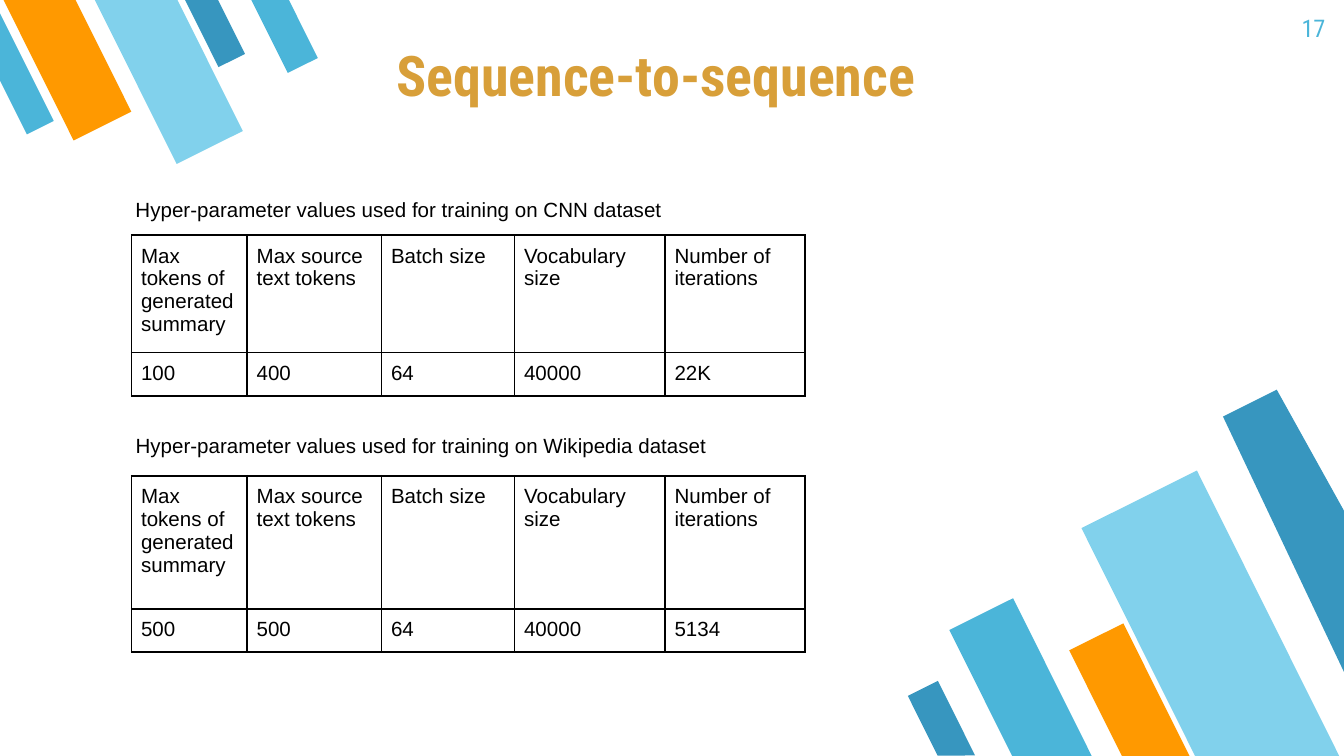
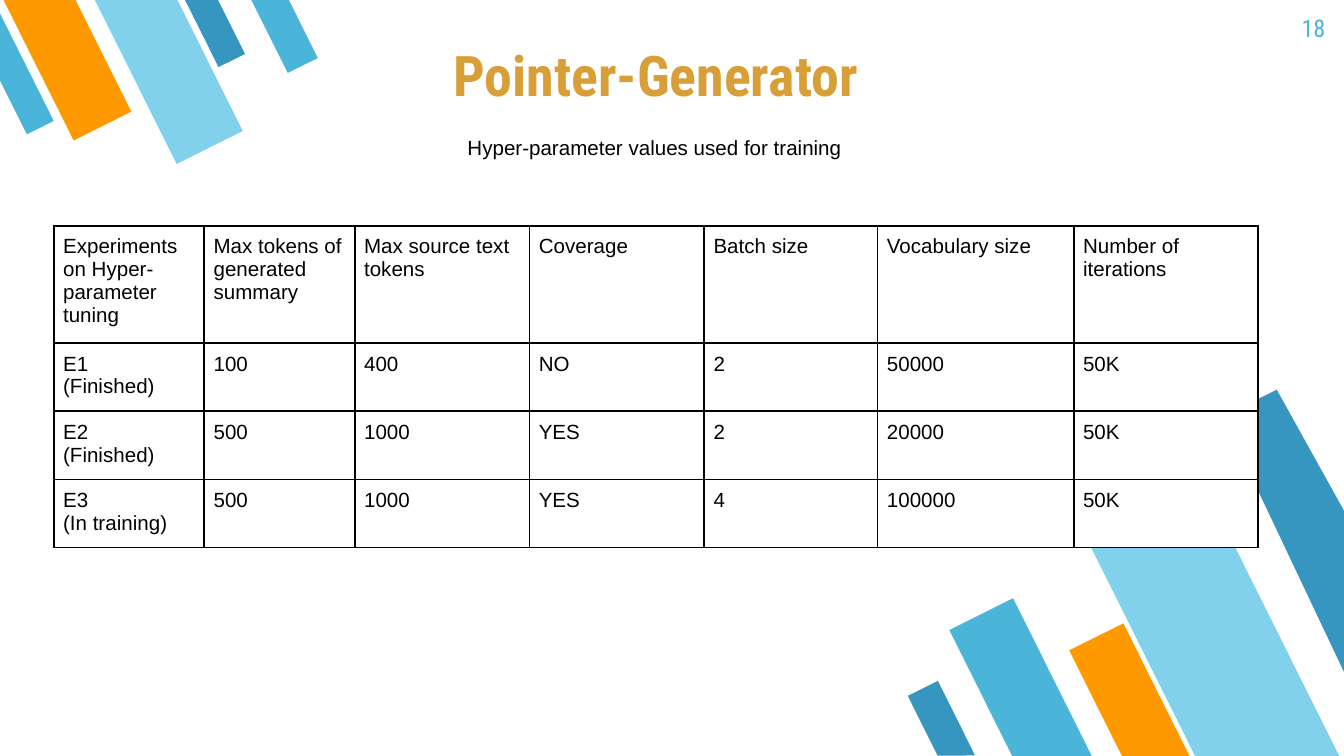
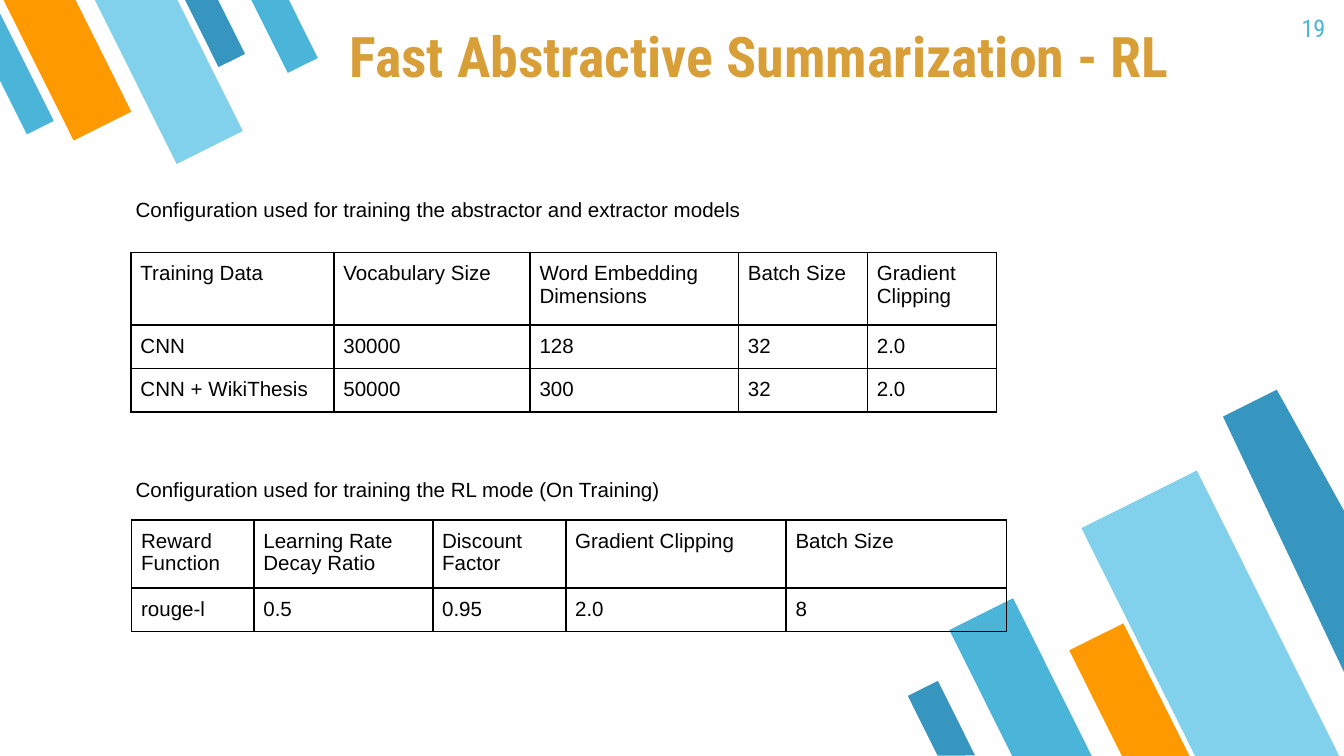
from lxml import etree
from pptx import Presentation
from pptx.dml.color import RGBColor
from pptx.enum.shapes import MSO_SHAPE
from pptx.enum.text import MSO_ANCHOR, PP_ALIGN
from pptx.oxml import parse_xml
from pptx.oxml.ns import nsdecls
from pptx.util import Inches, Pt

BAND = MSO_SHAPE.FLOWCHART_MANUAL_INPUT
TOP, BOTTOM = MSO_ANCHOR.TOP, MSO_ANCHOR.BOTTOM
LEFT, CENTER, RIGHT = PP_ALIGN.LEFT, PP_ALIGN.CENTER, PP_ALIGN.RIGHT

COLORS = {
    "sky": "4BB5D9",
    "pale": "81D1EC",
    "orange": "FF9900",
    "deep": "3796BF",
    "gold": "D89F39",
    "black": "000000",
    "white": "FFFFFF",
}
RGB = {name: RGBColor.from_string(value) for name, value in COLORS.items()}
HEADING_FONT, BODY_FONT = "Roboto Condensed", "Arial"

deck = Presentation()
deck.slide_width = Inches(10)
deck.slide_height = Inches(5.625)
COL = deck.slide_width / 100
ROW = deck.slide_height / 56.25
PADDING = round(COL)
CELL_PADDING = round(0.7 * COL)

RISING, FALLING = 153.5, 333.5
BANDS = [
    (73.3, 45, 5.3, 13.2, RISING, "sky"),
    (85.3, 35.9, 9.6, 23.9, RISING, "pale"),
    (81.8, 46.8, 4.5, 11.1, RISING, "orange"),
    (68.8, 50.9, 2.5, 6.2, RISING, "deep"),
    (14.9, -0.8, 2.2, 5.6, FALLING, "deep"),
    (2.6, -1.8, 4.8, 11.8, FALLING, "orange"),
    (9.8, -2, 5.5, 13.7, FALLING, "pale"),
    (19.9, -1, 2.5, 6.2, FALLING, "sky"),
]
EDGE_BANDS = [
    ([(95.4, 29), (90.7, 31.3), (100, 50.1), (100, 38.3)], "deep"),
    ([(2, 10), (4.2, 9), (0, 0.6), (0, 5.9)], "sky"),
]

SEQUENCE_HEADER = ["Max tokens of generated summary", "Max source text tokens",
                   "Batch size", "Vocabulary size"]
SEQUENCE_COLS = [8.6, 10, 9.9, 11.2, 10.4]

PAGES = [
    {
        "number": "17",
        "title": ("Sequence-to-sequence", 4, 1.6),
        "captions": [
            ("Hyper-parameter values used for training on CNN dataset", 9.1, 13.7, 42.7),
            ("Hyper-parameter values used for training on Wikipedia dataset", 9.1, 31.3, 46.1),
        ],
        "tables": [
            (9.8, 17.5, SEQUENCE_COLS, [8.6, 3.1], None, [
                SEQUENCE_HEADER + ["Number of\niterations"],
                ["100", "400", "64", "40000", "22K"],
            ]),
            (9.8, 35.4, SEQUENCE_COLS, [9.9, 3.1], None, [
                SEQUENCE_HEADER + ["Number of iterations"],
                ["500", "500", "64", "40000", "5134"],
            ]),
        ],
    },
    {
        "number": "18",
        "title": ("Pointer-Generator", 4, 1.6),
        "captions": [("Hyper-parameter values used for training", 33.8, 9.1, 30)],
        "tables": [
            (4, 16.8, [11.2, 11.2, 13, 13, 12.9, 14.6, 13.7], [8.6, 4.8, 4.8, 4.8], "white", [
                ["Experiments on Hyper-parameter tuning", "Max tokens of generated summary",
                 "Max source text tokens", "Coverage", "Batch size", "Vocabulary size",
                 "Number of\niterations"],
                ["E1\n(Finished)", "100", "400", "NO", "2", "50000", "50K"],
                ["E2\n(Finished)", "500", "1000", "YES", "2", "20000", "50K"],
                ["E3\n(In training)", "500", "1000", "YES", "4", "100000", "50K"],
            ]),
        ],
    },
    {
        "number": "19",
        "title": ("Fast Abstractive Summarization - RL", 11.7, 0.2),
        "captions": [
            ("Configuration used for training the abstractor and extractor models", 9.1, 13.7, 52.9),
            ("Configuration used for training the RL mode (On Training)", 9.1, 34.6, 46.1),
        ],
        "tables": [
            (9.75, 18.8, [15.1, 14.6, 15.5, 9.6, 9.6], [5.4, 3.1, 3.1], None, [
                ["Training Data", "Vocabulary Size", "Word Embedding Dimensions",
                 "Batch Size", "Gradient Clipping"],
                ["CNN", "30000", "128", "32", "2.0"],
                ["CNN + WikiThesis", "50000", "300", "32", "2.0"],
            ]),
            (9.8, 38.7, [9.1, 13.3, 9.9, 16.4, 16.4], [4.8, 3.1], None, [
                ["Reward Function", "Learning Rate Decay Ratio", "Discount Factor",
                 "Gradient Clipping", "Batch Size"],
                ["rouge-l", "0.5", "0.95", "2.0", "8"],
            ]),
        ],
    },
]


def write(frame, text, font, size, color, align=LEFT, bold=False):
    frame.text = text
    frame.word_wrap = True
    for paragraph in frame.paragraphs:
        paragraph.alignment = align
        paragraph.font.name = font
        paragraph.font.size = Pt(size)
        paragraph.font.bold = bold
        paragraph.font.color.rgb = RGB[color]


def add_label(slide, box, anchor, *style):
    left, top, width, height = box
    frame = slide.shapes.add_textbox(
        round(left * COL), round(top * ROW), round(width * COL), round(height * ROW)
    ).text_frame
    frame.margin_left = frame.margin_right = PADDING
    frame.margin_top = frame.margin_bottom = PADDING
    frame.vertical_anchor = anchor
    write(frame, *style)


for page in PAGES:
    slide = deck.slides.add_slide(deck.slide_layouts[6])

    bands = []
    for left, top, width, height, angle, color in BANDS:
        band = slide.shapes.add_shape(
            BAND, round(left * COL), round(top * ROW), round(width * COL), round(height * ROW))
        band.rotation = angle
        band.element.spPr.xfrm.set("flipH", "1")
        bands.append((band, color))
    for corners, color in EDGE_BANDS:
        outline = slide.shapes.build_freeform(*corners[0], scale=COL)
        outline.add_line_segments(corners[1:], close=True)
        bands.append((outline.convert_to_shape(), color))
    for band, color in bands:
        band.shadow.inherit = False
        band.fill.solid()
        band.fill.fore_color.rgb = RGB[color]
        band.line.fill.background()

    add_label(slide, (93.6, 0, 6, 4.3), TOP, page["number"], HEADING_FONT, 13, "sky", RIGHT)
    title, left, top = page["title"]
    add_label(slide, (left, top, 89.6, 7.4), BOTTOM,
              title, HEADING_FONT, 30, "gold", CENTER, True)

    for left, top, cols, rows, fill, values in page["tables"]:
        table = slide.shapes.add_table(
            len(rows), len(cols), round(left * COL), round(top * ROW),
            round(sum(cols) * COL), round(sum(rows) * ROW)).table
        table.first_row = table.horz_banding = False
        for column, width in zip(table.columns, cols):
            column.width = round(width * COL)
        for row, height, texts in zip(table.rows, rows, values):
            row.height = round(height * ROW)
            for cell, text in zip(row.cells, texts):
                cell.margin_left = cell.margin_right = CELL_PADDING
                cell.margin_top = cell.margin_bottom = CELL_PADDING
                write(cell.text_frame, text, BODY_FONT, 11, "black")
                if fill:
                    cell.fill.solid()
                    cell.fill.fore_color.rgb = RGB[fill]
                else:
                    cell.fill.background()
                properties = cell._tc.get_or_add_tcPr()
                for position, side in enumerate(["lnL", "lnR", "lnT", "lnB"]):
                    border = parse_xml(f'<a:{side} {nsdecls("a")} w="{Pt(1)}"/>')
                    paint = etree.SubElement(border, border.tag.replace(side, "solidFill"))
                    etree.SubElement(paint, border.tag.replace(side, "srgbClr"),
                                     val=COLORS["black"])
                    properties.insert(position, border)

    for caption, left, top, width in page["captions"]:
        add_label(slide, (left, top, width, 2.8), TOP, caption, BODY_FONT, 11, "black")

deck.save("out.pptx")
